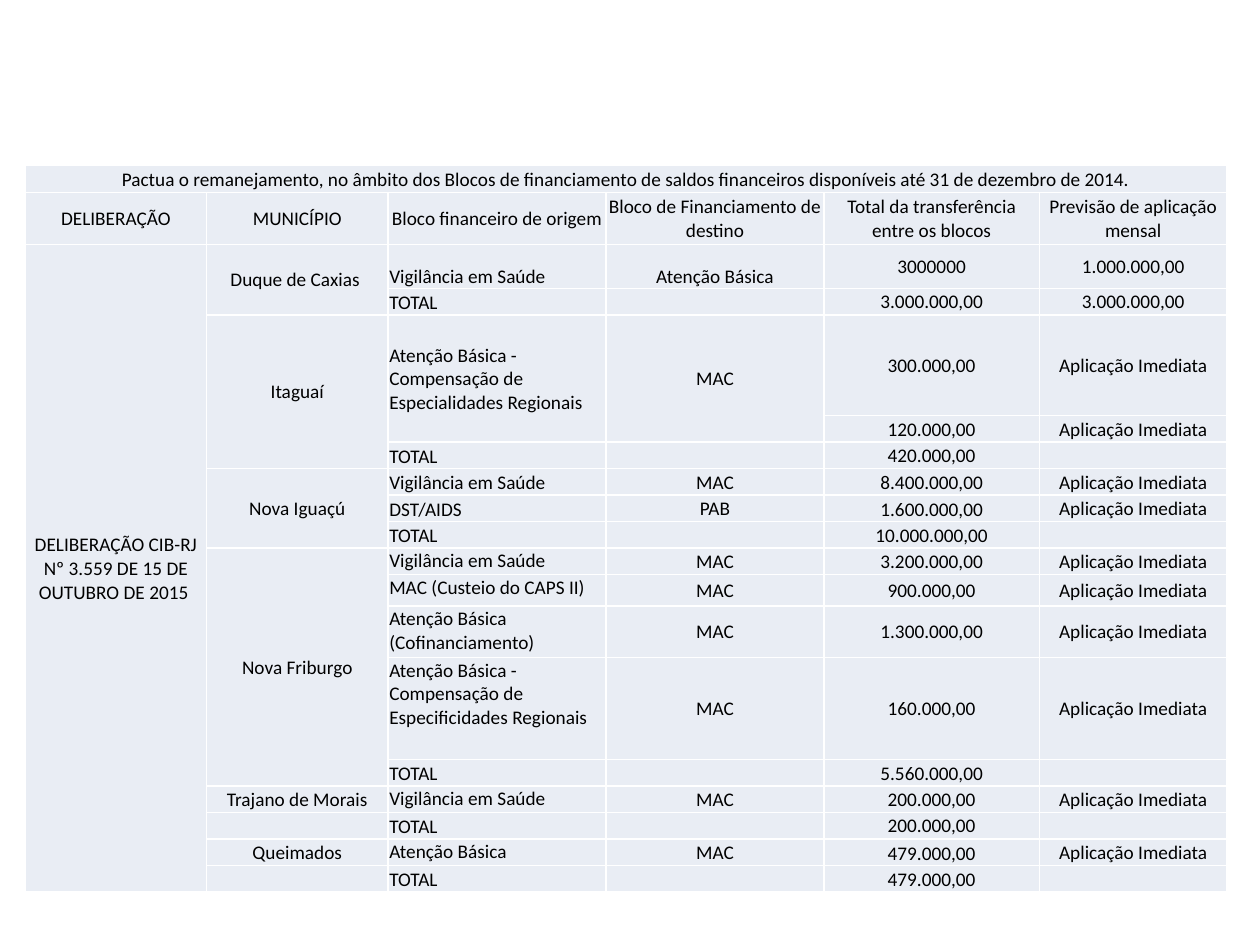
from lxml.etree import SubElement
from pptx import Presentation
from pptx.dml.color import RGBColor
from pptx.enum.text import MSO_ANCHOR as Anchor, PP_ALIGN as Align
from pptx.oxml.ns import qn
from pptx.util import Inches, Pt


def color(value):
    return RGBColor.from_string(value)


def add_borders(cell, value):
    properties = cell._tc.get_or_add_tcPr()
    for side in ("lnL", "lnR", "lnT", "lnB"):
        line = SubElement(properties, qn(f"a:{side}"), w=str(Pt(1)))
        fill = SubElement(line, qn("a:solidFill"))
        SubElement(fill, qn("a:srgbClr"), val=value)


TITLE = "Pactua o remanejamento, no âmbito dos Blocos de financiamento de saldos financeiros disponíveis até 31 de dezembro de 2014."
RESOLUTION = "DELIBERAÇÃO CIB-RJ Nº 3.559 DE 15 DE OUTUBRO DE 2015 "
HEALTH = "Vigilância em Saúde"
CARE = "Atenção Básica"
NOW = "Aplicação Imediata"

rows = [
    (0.22, "mmm", TITLE, "", "", "", "", ""),
    (0.41, "mmm", "DELIBERAÇÃO", "MUNICÍPIO", "Bloco financeiro de origem",
     "Bloco de Financiamento de destino", "Total da transferência entre os blocos",
     "Previsão de aplicação mensal"),
    (0.35, "bbm", RESOLUTION, "Duque de Caxias ", HEALTH, CARE, "3000000", "1.000.000,00"),
    (0.21, "bmm", "", "", "TOTAL", "", "3.000.000,00", "3.000.000,00"),
    (0.8, "mmm", "", "Itaguaí", "Atenção Básica - Compensação de Especialidades Regionais",
     "MAC", "300.000,00", NOW),
    (0.21, "mmm", "", "", "", "", "120.000,00", NOW),
    (0.21, "bmm", "", "", "TOTAL", "", "420.000,00", ""),
    (0.21, "bmb", "", "Nova Iguaçú", HEALTH, "MAC", "8.400.000,00", NOW),
    (0.21, "bmb", "", "", "DST/AIDS", "PAB", "1.600.000,00", NOW),
    (0.21, "bmb", "", "", "TOTAL", "", "10.000.000,00", ""),
    (0.21, "tmm", "", "Nova Friburgo", HEALTH, "MAC", "3.200.000,00", NOW),
    (0.25, "tmm", "", "", "MAC (Custeio do CAPS II)", "MAC", "900.000,00", NOW),
    (0.41, "tmm", "", "", "Atenção Básica (Cofinanciamento)", "MAC", "1.300.000,00", NOW),
    (0.81, "tmm", "", "", "Atenção Básica - Compensação de Especificidades Regionais",
     "MAC", "160.000,00", NOW),
    (0.21, "bmm", "", "", "TOTAL", "", "5.560.000,00", ""),
    (0.21, "tmm", "", "Trajano de Morais", HEALTH, "MAC", "200.000,00", NOW),
    (0.21, "bmm", "", "", "TOTAL", "", "200.000,00", ""),
    (0.21, "tmb", "", "Queimados", CARE, "MAC", "479.000,00", NOW),
    (0.21, "bmb", "", "", "TOTAL", "", "479.000,00", ""),
]
widths = [1.44, 1.44, 1.73, 1.73, 1.71, 1.49]
merges = [(0, 0, 0, 5), (2, 0, 18, 0), (2, 1, 3, 1), (4, 1, 6, 1), (4, 2, 5, 2),
          (4, 3, 5, 3), (7, 1, 9, 1), (10, 1, 14, 1)]
anchors = {"t": Anchor.TOP, "m": Anchor.MIDDLE, "b": Anchor.BOTTOM}

presentation = Presentation()
presentation.slide_width = Inches(10)
presentation.slide_height = Inches(7.5)
slide = presentation.slides.add_slide(presentation.slide_layouts[6])

table = slide.shapes.add_table(len(rows), len(widths), Inches(0.2), Inches(1.31),
                               Inches(9.53), Inches(5.75)).table
table.first_row = False
table.horz_banding = False
for column, width in zip(table.columns, widths):
    column.width = Inches(width)

for row_index, (height, row_anchors, *texts) in enumerate(rows):
    table.rows[row_index].height = Inches(height)
    cell_anchors = "mm" + row_anchors + "m"
    for column_index, text in enumerate(texts):
        cell = table.cell(row_index, column_index)
        cell.margin_left = cell.margin_right = cell.margin_top = Inches(0.01)
        cell.margin_bottom = 0
        cell.vertical_anchor = anchors[cell_anchors[column_index]]
        add_borders(cell, "FFFFFF")
        cell.fill.solid()
        cell.fill.fore_color.rgb = color("E9EDF4")
        paragraph = cell.text_frame.paragraphs[0]
        is_source_block = column_index == 2 and row_index > 1
        paragraph.alignment = Align.LEFT if is_source_block else Align.CENTER
        if text:
            run = paragraph.add_run()
            run.text = text
            run.font.name = "Calibri"
            run.font.size = Pt(11)
            run.font.color.rgb = color("000000")
        else:
            SubElement(paragraph._p, qn("a:endParaRPr"), sz="1100")

for top, left, bottom, right in merges:
    table.cell(top, left).merge(table.cell(bottom, right))

presentation.save("out.pptx")
